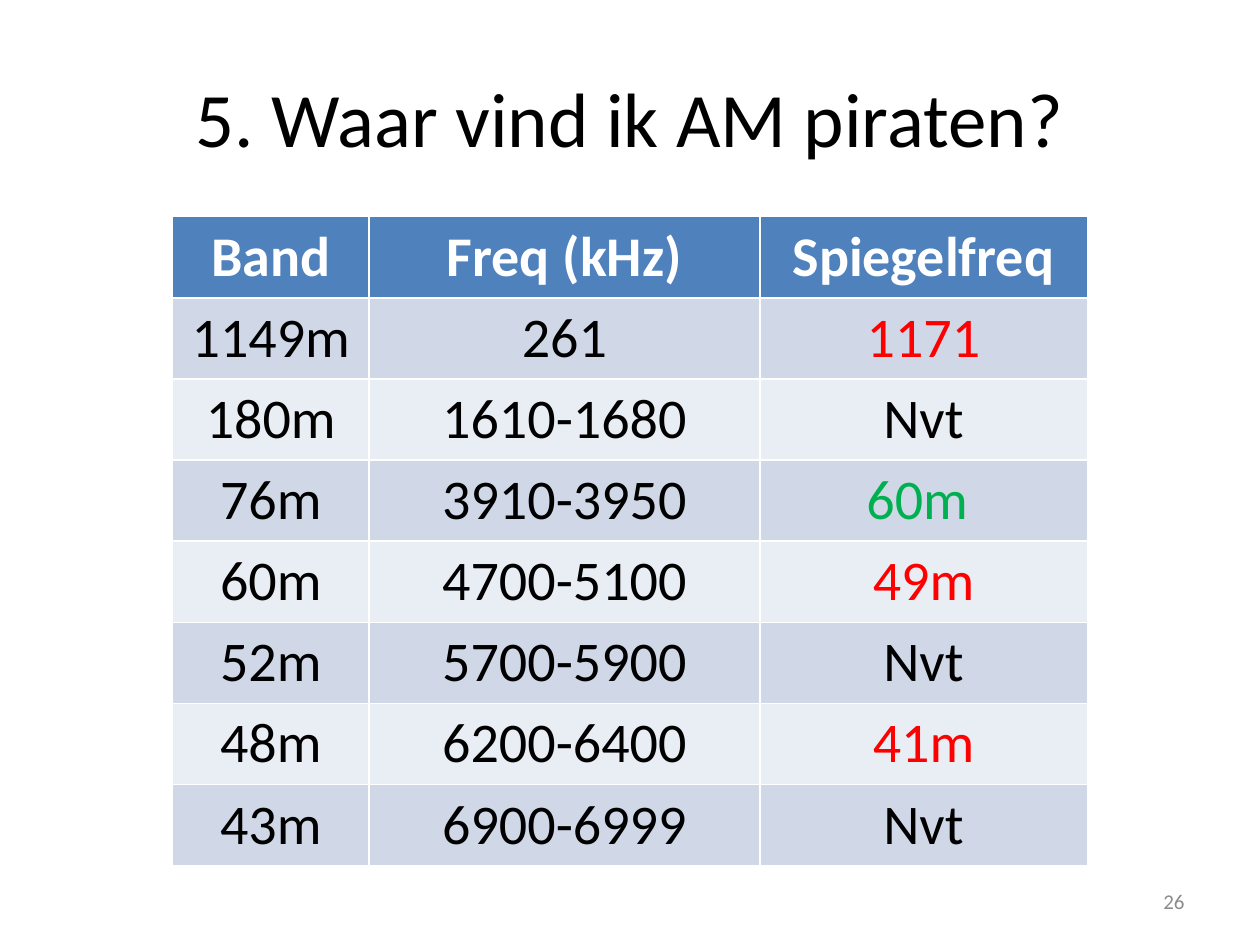
from pptx import Presentation
from pptx.dml.color import RGBColor
from pptx.enum.text import MSO_ANCHOR as Anchor, PP_ALIGN as Align
from pptx.util import Inches, Pt

BLACK, WHITE, GREY = "000000", "FFFFFF", "8C8C8C"
RED, GREEN = "FF0000", "00B050"
HEADER_FILL, BAND_FILLS = "4F81BD", ("D0D8E8", "E9EDF4")
COLUMN_WIDTHS = (1.56, 3.1, 2.6)
HEADINGS = ("Band", "Freq (kHz)", "Spiegelfreq")
BANDS = (
    ("1149m", "261", "1171"),
    ("180m", "1610-1680", "Nvt"),
    ("76m", "3910-3950", "60m "),
    ("60m", "4700-5100", "49m"),
    ("52m", "5700-5900", "Nvt"),
    ("48m", "6200-6400", "41m"),
    ("43m", "6900-6999", "Nvt"),
)
MIRROR_COLORS = {"1171": RED, "60m ": GREEN, "49m": RED, "41m": RED}


def rgb(value):
    return RGBColor.from_string(value)


def write(frame, text, size=32, color=BLACK, bold=False, align=Align.CENTER):
    para = frame.paragraphs[0]
    para.alignment = align
    span = para.add_run()
    span.text = text
    font = span.font
    font.name, font.size, font.bold = "Calibri", Pt(size), bold
    font.color.rgb = rgb(color)


class SlideBuilder:
    """Adds styled elements to the current slide."""

    def __init__(self, page):
        self.page = page

    def title(self, text, left, top, width, height):
        box = self.page.shapes.title
        box.left, box.top = Inches(left), Inches(top)
        box.width, box.height = Inches(width), Inches(height)
        box.text_frame.vertical_anchor = Anchor.MIDDLE
        write(box.text_frame, text, size=44)

    def text(self, text, left, top, width, height, **style):
        box = self.page.shapes.add_textbox(
            Inches(left), Inches(top), Inches(width), Inches(height))
        frame = box.text_frame
        frame.word_wrap = True
        frame.vertical_anchor = Anchor.MIDDLE
        write(frame, text, **style)

    def cell(self, cell, text, fill, **style):
        cell.fill.solid()
        cell.fill.fore_color.rgb = rgb(fill)
        write(cell.text_frame, text, **style)

    def table(self, headings, rows, widths, left, top, height):
        table = self.page.shapes.add_table(
            len(rows) + 1, len(widths), Inches(left), Inches(top),
            Inches(sum(widths)), Inches(height)).table
        for column, width in zip(table.columns, widths):
            column.width = Inches(width)
        for column, heading in enumerate(headings):
            self.cell(table.cell(0, column), heading, HEADER_FILL,
                      color=WHITE, bold=True)
        last = len(widths) - 1
        for index, row in enumerate(rows):
            fill = BAND_FILLS[index % 2]
            for column, value in enumerate(row):
                color = MIRROR_COLORS.get(value, BLACK) if column == last else BLACK
                self.cell(table.cell(index + 1, column), value, fill, color=color)


def main():
    deck = Presentation()
    deck.slide_width, deck.slide_height = Inches(10), Inches(7.5)
    builder = SlideBuilder(deck.slides.add_slide(deck.slide_layouts[5]))
    builder.title("5. Waar vind ik AM piraten?", 0.5, 0.3, 9, 1.25)
    builder.table(HEADINGS, BANDS, COLUMN_WIDTHS, 1.37, 1.72, 5.07)
    builder.text("26", 7.17, 6.95, 2.33, 0.4,
                 size=12, color=GREY, align=Align.RIGHT)
    deck.save("out.pptx")


if __name__ == "__main__":
    main()
